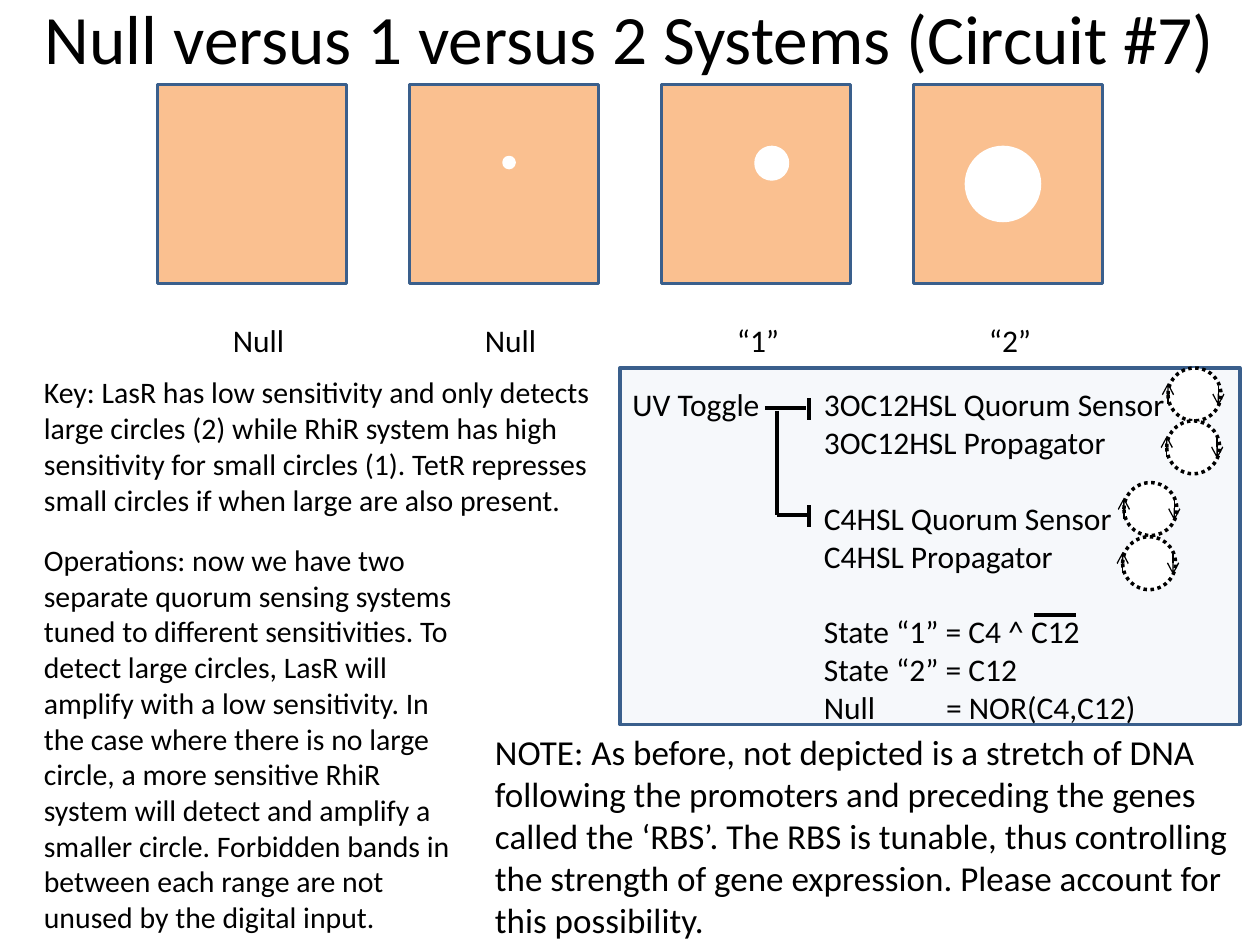
from typing import NamedTuple, Optional

from lxml import etree
from pptx import Presentation
from pptx.dml.color import RGBColor
from pptx.enum.dml import MSO_LINE
from pptx.enum.shapes import MSO_CONNECTOR, MSO_SHAPE
from pptx.enum.text import MSO_ANCHOR, MSO_AUTO_SIZE, PP_ALIGN
from pptx.oxml.ns import qn
from pptx.util import Inches, Pt

RECTANGLE, OVAL = MSO_SHAPE.RECTANGLE, MSO_SHAPE.OVAL
STRAIGHT = MSO_CONNECTOR.STRAIGHT
DOTTED = MSO_LINE.ROUND_DOT
LEFT, CENTER = PP_ALIGN.LEFT, PP_ALIGN.CENTER
TOP, MIDDLE = MSO_ANCHOR.TOP, MSO_ANCHOR.MIDDLE
NO_AUTOFIT = MSO_AUTO_SIZE.NONE

FONT = "Calibri"
BLACK, WHITE = "000000", "FFFFFF"
PLATE_FILL, OUTLINE, PANEL_FILL = "FAC090", "3A5F8C", "4F81BD"


class Spot(NamedTuple):
    x: float
    y: float
    diameter: float


class Plate(NamedTuple):
    label: str
    spot: Optional[Spot]


class PanelLine(NamedTuple):
    text: str
    space_before: float = 0


class Segment(NamedTuple):
    x1: float
    y1: float
    x2: float
    y2: float


PLATES = [
    Plate("Null", None),
    Plate("Null", Spot(4, 1.25, 0.08)),
    Plate("“1”", Spot(6, 1.17, 0.25)),
    Plate("“2”", Spot(7.67, 1.17, 0.58)),
]
PLATE_LEFT, PLATE_PITCH = 1.25, 2

LINE_GAP = 21.6
CIRCUIT_LINES = [
    PanelLine("UV Toggle\t3OC12HSL Quorum Sensor"),
    PanelLine("\t3OC12HSL Propagator"),
    PanelLine("\tC4HSL Quorum Sensor", LINE_GAP),
    PanelLine("\tC4HSL Propagator"),
    PanelLine("\tState “1” = C4 ^ C12", LINE_GAP),
    PanelLine("\tState “2” = C12"),
    PanelLine("\tNull\t= NOR(C4,C12)"),
]
CIRCUIT_TABS = (1.52, 2.49)

PLASMIDS = [(9.27, 2.92), (9.26, 3.34), (8.92, 3.83), (8.91, 4.26)]

REPRESSION_LINES = [
    Segment(6.07, 3.24, 6.4, 3.24),
    Segment(6.42, 3.16, 6.42, 3.33),
    Segment(6.17, 3.26, 6.17, 4.09),
    Segment(6.17, 4.09, 6.42, 4.09),
    Segment(6.42, 4.01, 6.42, 4.18),
]
C12_NEGATION = Segment(8.21, 4.88, 8.54, 4.88)

KEY = (
    "Key: LasR has low sensitivity and only detects large circles (2) while RhiR "
    "system has high sensitivity for small circles (1). TetR represses small "
    "circles if when large are also present."
)
OPERATIONS = (
    "Operations: now we have two separate quorum sensing systems tuned to "
    "different sensitivities. To detect large circles, LasR will amplify with a "
    "low sensitivity. In the case where there is no large circle, a more "
    "sensitive RhiR system will detect and amplify a smaller circle. Forbidden "
    "bands in between each range are not unused by the digital input."
)
NOTE = (
    "NOTE: As before, not depicted is a stretch of DNA following the promoters "
    "and preceding the genes called the ‘RBS’. The RBS is tunable, thus "
    "controlling the strength of gene expression. Please account for this "
    "possibility."
)


def rgb(color: str) -> RGBColor:
    return RGBColor.from_string(color)


def place(shape, left: float, top: float, width: float, height: float) -> None:
    shape.left, shape.top = Inches(left), Inches(top)
    shape.width, shape.height = Inches(width), Inches(height)


def add_tabs(paragraph, positions) -> None:
    tabs = etree.SubElement(paragraph._p.get_or_add_pPr(), qn("a:tabLst"))
    for position in positions:
        etree.SubElement(tabs, qn("a:tab"), pos=str(Inches(position)), algn="l")


def write(frame, lines, *, size=18.0, align=LEFT, anchor=TOP, tabs=()) -> None:
    """Fill a text frame with one paragraph for each PanelLine."""
    frame.word_wrap = True
    frame.auto_size = NO_AUTOFIT
    frame.vertical_anchor = anchor
    for index, line in enumerate(lines):
        paragraph = frame.add_paragraph() if index else frame.paragraphs[0]
        paragraph.text = line.text
        if tabs:
            add_tabs(paragraph, tabs)
        paragraph.alignment = align
        paragraph.space_before = Pt(line.space_before)
        paragraph.font.name = FONT
        paragraph.font.size = Pt(size)
        paragraph.font.color.rgb = rgb(BLACK)


def add_text(slide, box, lines, **text_format) -> None:
    textbox = slide.shapes.add_textbox(*map(Inches, box))
    write(textbox.text_frame, lines, **text_format)


def add_shape(slide, kind, box, fill: str, line: str, dash=None, opacity=None) -> None:
    shape = slide.shapes.add_shape(kind, *map(Inches, box))
    shape.shadow.inherit = False
    shape.fill.solid()
    shape.fill.fore_color.rgb = rgb(fill)
    shape.line.color.rgb = rgb(line)
    shape.line.width = Pt(2)
    if dash:
        shape.line.dash_style = dash
    if opacity is not None:
        color = shape._element.spPr.find(qn("a:solidFill"))[0]
        etree.SubElement(color, qn("a:alpha"), val=str(opacity * 1000))


def add_line(slide, segment: Segment, width=2.25, arrow=False) -> None:
    connector = slide.shapes.add_connector(STRAIGHT, *map(Inches, segment))
    connector.line.color.rgb = rgb(BLACK)
    connector.line.width = Pt(width)
    if arrow:
        etree.SubElement(connector.line._get_or_add_ln(), qn("a:tailEnd"), type="arrow")
    etree.SubElement(connector._element.spPr, qn("a:effectLst"))


def add_plate(slide, plate: Plate, left: float) -> None:
    add_shape(slide, RECTANGLE, (left, 0.67, 1.5, 1.58), PLATE_FILL, OUTLINE)
    if plate.spot:
        x, y, diameter = plate.spot
        add_shape(slide, OVAL, (x, y, diameter, diameter), WHITE, WHITE)
    add_text(slide, (left + 0.5, 2.5, 0.75, 0.4), [PanelLine(plate.label)])


def add_plasmid(slide, x: float, y: float) -> None:
    """Draw a dotted ring with an arrow down its right and up its left side."""
    add_shape(slide, OVAL, (x, y, 0.42, 0.42), WHITE, BLACK, dash=DOTTED)
    right = x + 0.4
    add_line(slide, Segment(right, y + 0.14, right, y + 0.3), 0.75, arrow=True)
    add_line(slide, Segment(x, y + 0.29, x, y + 0.12), 0.75, arrow=True)


def main() -> None:
    presentation = Presentation()
    presentation.slide_width, presentation.slide_height = Inches(10), Inches(7.5)
    slide = presentation.slides.add_slide(presentation.slide_layouts[5])

    add_shape(slide, RECTANGLE, (4.92, 2.92, 4.92, 2.83), PANEL_FILL, OUTLINE, opacity=5)
    for column, plate in enumerate(PLATES):
        add_plate(slide, plate, PLATE_LEFT + column * PLATE_PITCH)

    title = slide.shapes.title
    place(title, 0, -0.33, 10, 1.25)
    heading = [PanelLine("Null versus 1 versus 2 Systems (Circuit #7)")]
    write(title.text_frame, heading, size=39.6, align=CENTER, anchor=MIDDLE)

    add_text(slide, (3.83, 5.75, 6.42, 3), [PanelLine(NOTE)], size=20)
    add_text(slide, (0.25, 2.92, 4.81, 1.25), [PanelLine(KEY)], size=17)
    add_text(slide, (0.25, 4.25, 3.5, 1.08), [PanelLine(OPERATIONS)], size=17)

    add_text(slide, (4.92, 3.01, 4.48, 2.83), CIRCUIT_LINES, tabs=CIRCUIT_TABS)
    for x, y in PLASMIDS:
        add_plasmid(slide, x, y)
    for segment in [*REPRESSION_LINES, C12_NEGATION]:
        add_line(slide, segment)

    presentation.save("out.pptx")


if __name__ == "__main__":
    main()
